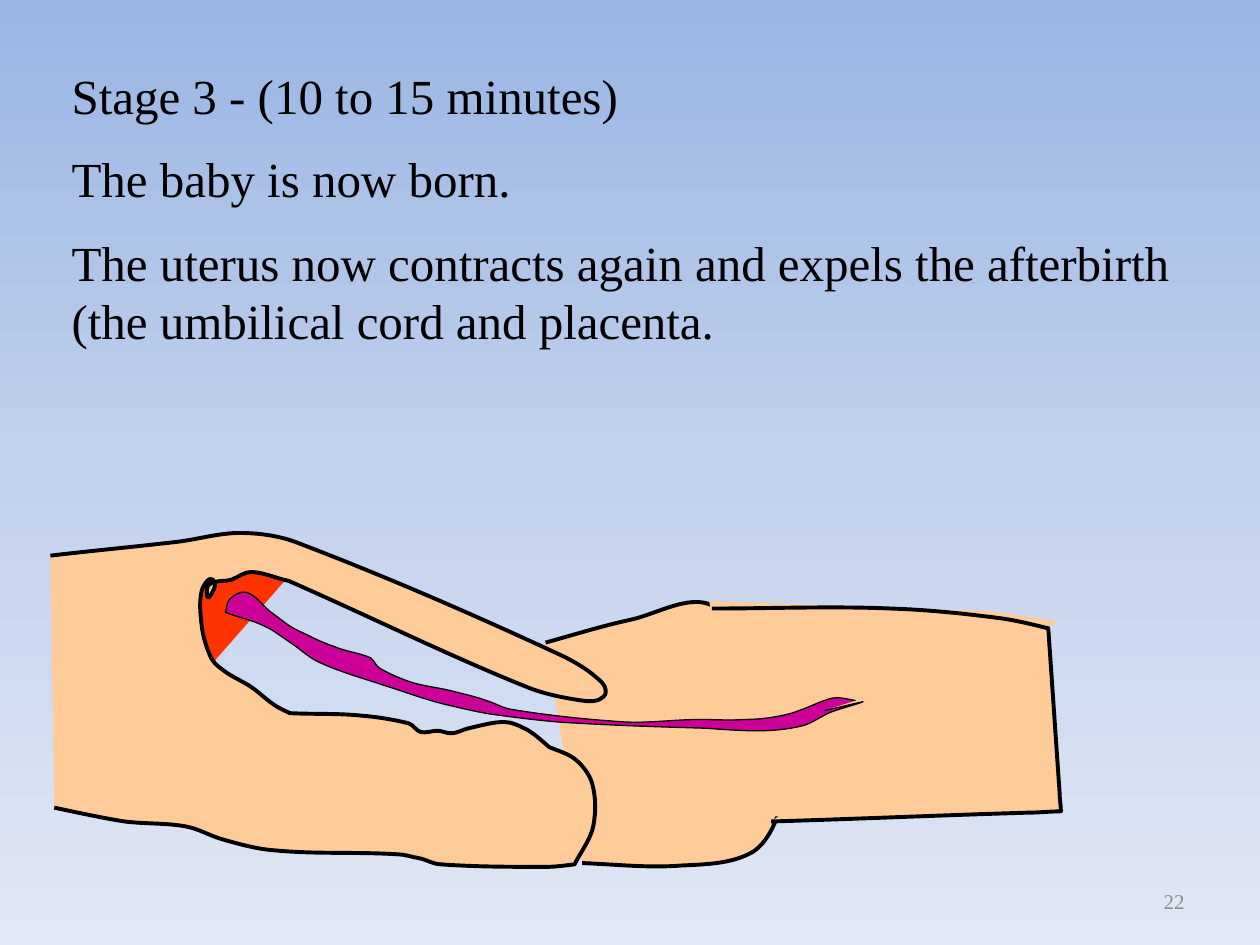
from copy import deepcopy
from dataclasses import dataclass
from math import dist

from pptx import Presentation
from pptx.dml.color import RGBColor as Rgb
from pptx.enum.shapes import MSO_SHAPE as Kind
from pptx.enum.text import MSO_ANCHOR as Anchor, PP_ALIGN as Align
from pptx.oxml.ns import qn
from pptx.oxml.xmlchemy import OxmlElement as Node
from pptx.util import Pt

PX = 9144
WIDE, HIGH = 1000, 750


@dataclass(frozen=True)
class Theme:
    font: str = "Times New Roman"
    body: int = 28
    small: int = 12
    gap: int = 14
    bold: float = 2.25
    thin: float = 0.75
    ink: str = "000000"
    gray: str = "8C8C8C"
    skin: str = "FFCC99"
    blood: str = "FF3300"
    cord: str = "CC0099"
    sky: tuple = ("9AB5E4", "C2D1ED", "E1E8F5")


def smooth(knots):
    """Return two handles and an end for each step between knots."""
    padded = [knots[0], *knots, knots[-1]]
    slopes = []
    for (ax, ay), (bx, by) in zip(padded, padded[2:]):
        size = dist((ax, ay), (bx, by))
        slopes.append(((bx - ax) / size, (by - ay) / size))
    dots = []
    for a, b, (ux, uy), (vx, vy) in zip(knots, knots[1:], slopes, slopes[1:]):
        reach = dist(a, b) / 3
        dots += [(a[0] + ux * reach, a[1] + uy * reach),
                 (b[0] - vx * reach, b[1] - vy * reach), b]
    return dots


class Page:
    def __init__(self, deck, theme):
        self.theme = theme
        self.slide = deck.slides.add_slide(deck.slide_layouts[6])
        self.shapes = self.slide.shapes

    def back(self):
        fill = self.slide.background.fill
        fill.gradient()
        fill.gradient_angle = 270
        first = self.slide.element.find(".//" + qn("a:gs"))
        first.addnext(deepcopy(first))
        for i, (stop, color) in enumerate(zip(fill.gradient_stops, self.theme.sky)):
            stop.position = i / 2
            stop.color.rgb = Rgb.from_string(color)

    def paint(self, shape, fill, width=0):
        shape.shadow.inherit = False
        shape.fill.solid()
        shape.fill.fore_color.rgb = Rgb.from_string(fill)
        if width:
            shape.line.width = Pt(width)
            shape.line.color.rgb = Rgb.from_string(self.theme.ink)
        else:
            shape.line.fill.background()

    def trace(self, dots, fill, width=0, close=True, group=None):
        pen = (group or self).shapes.build_freeform(*dots[0], scale=PX)
        pen.add_line_segments(dots[1:], close=close)
        shape = pen.convert_to_shape()
        self.paint(shape, fill, width)
        return shape

    def curve(self, spans, fill, width, group=None):
        dots = [spans[0][0]]
        for i, span in enumerate(spans):
            dots += smooth(span if i == 0 else [dots[-1], *span])
        shape = self.trace(dots, fill, width, False, group)
        lines = list(shape.element.iter(qn("a:lnTo")))
        for i in range(0, len(lines), 3):
            bend = Node("a:cubicBezTo")
            lines[i].addprevious(bend)
            for line in lines[i:i + 3]:
                bend.append(line[0])
                line.getparent().remove(line)

    def rect(self, x, y, w, h, fill, turn):
        shape = self.shapes.add_shape(Kind.RECTANGLE, x * PX, y * PX, w * PX, h * PX)
        shape.rotation = turn
        self.paint(shape, fill)

    def text(self, x, y, w, h, words, size, color, align=Align.LEFT,
             anchor=Anchor.TOP, gap=0):
        frame = self.shapes.add_textbox(x * PX, y * PX, w * PX, h * PX).text_frame
        frame.word_wrap = True
        frame.vertical_anchor = anchor
        frame.text = words
        for para in frame.paragraphs:
            para.alignment = align
            para.space_before = Pt(gap)
            font = para.runs[0].font
            font.name, font.size = self.theme.font, Pt(size)
            font.color.rgb = Rgb.from_string(color)


HIP = [(433, 510), (500, 492), (569, 483), (588, 561), (620, 607),
       (618, 645), (596, 677), (540, 687), (462, 685)]
TRUNK = [(634, 648), (587, 648), (563, 477), (784, 485), (839, 493)]
WOMB = [(169, 526), (233, 453), (233, 434), (191, 433), (170, 437),
        (154, 468), (154, 491)]
PATCH = [(603, 556), (555, 587), (579, 641), (713, 626), (689, 564)]

UPPER = [(40, 441), (141, 430), (190, 423), (234, 430), (443, 519),
         (478, 542), (479, 553), (462, 556), (420, 546), (229, 461)]
RIM = [(199, 454), (184, 460), (166, 464), (166, 474), (169, 460), (160, 469),
       (160, 496), (168, 523), (180, 534), (199, 545), (217, 559), (230, 566)]
LOWER = [(287, 568), (324, 574), (334, 581), (347, 580), (358, 582),
         (372, 578), (400, 573), (418, 579), (436, 593)]
END = [(457, 603), (470, 622), (471, 655), (456, 686)]
UNDER = [(433, 688), (350, 686), (332, 681), (315, 678), (219, 675),
         (176, 666), (148, 656), (99, 652), (43, 641)]

CHEST = [(565, 483), (707, 483), (796, 491), (833, 499)]
FLANK = [(612, 652), (816, 645), (842, 644)]
NECK = [(841, 629), (832, 499)]

TIP = [(654, 564), (685, 557)]
CORD_LOW = [(660, 565), (637, 576), (601, 580), (561, 578), (459, 574),
            (391, 567), (353, 559), (305, 544), (252, 525), (229, 509),
            (210, 497), (179, 486)]
CORD_TOP = [(182, 476), (195, 470), (214, 485), (226, 494), (240, 502),
            (265, 513), (294, 522), (301, 530), (328, 542), (361, 549),
            (386, 556), (406, 563), (496, 573), (556, 571), (591, 571),
            (620, 568), (634, 564), (661, 554), (679, 556)]

WORDS = """Stage 3 - (10 to 15 minutes)
The baby is now born.
The uterus now contracts again and expels the afterbirth (the umbilical cord and placenta."""


def main():
    deck = Presentation()
    deck.slide_width, deck.slide_height = WIDE * PX, HIGH * PX
    theme = Theme()
    page = Page(deck, theme)
    page.back()

    page.curve([HIP], theme.skin, theme.bold)
    page.trace(TRUNK, theme.skin)
    page.rect(466, 495, 48, 177, theme.skin, 31)
    page.trace(WOMB, theme.blood)
    page.trace(PATCH, theme.skin)
    page.curve([UPPER, RIM, LOWER, END, UNDER], theme.skin, theme.bold)
    torso = page.shapes.add_group_shape()
    for spans in ([CHEST], [FLANK, NECK]):
        page.curve(spans, theme.skin, theme.bold, torso)
    page.curve([TIP, CORD_LOW, CORD_TOP], theme.cord, theme.thin)

    page.text(47, 47, 898, 246, WORDS, theme.body, theme.ink, gap=theme.gap)
    page.text(717, 695, 233, 40, "22", theme.small, theme.gray,
              Align.RIGHT, Anchor.MIDDLE)
    deck.save("out.pptx")


if __name__ == "__main__":
    main()
